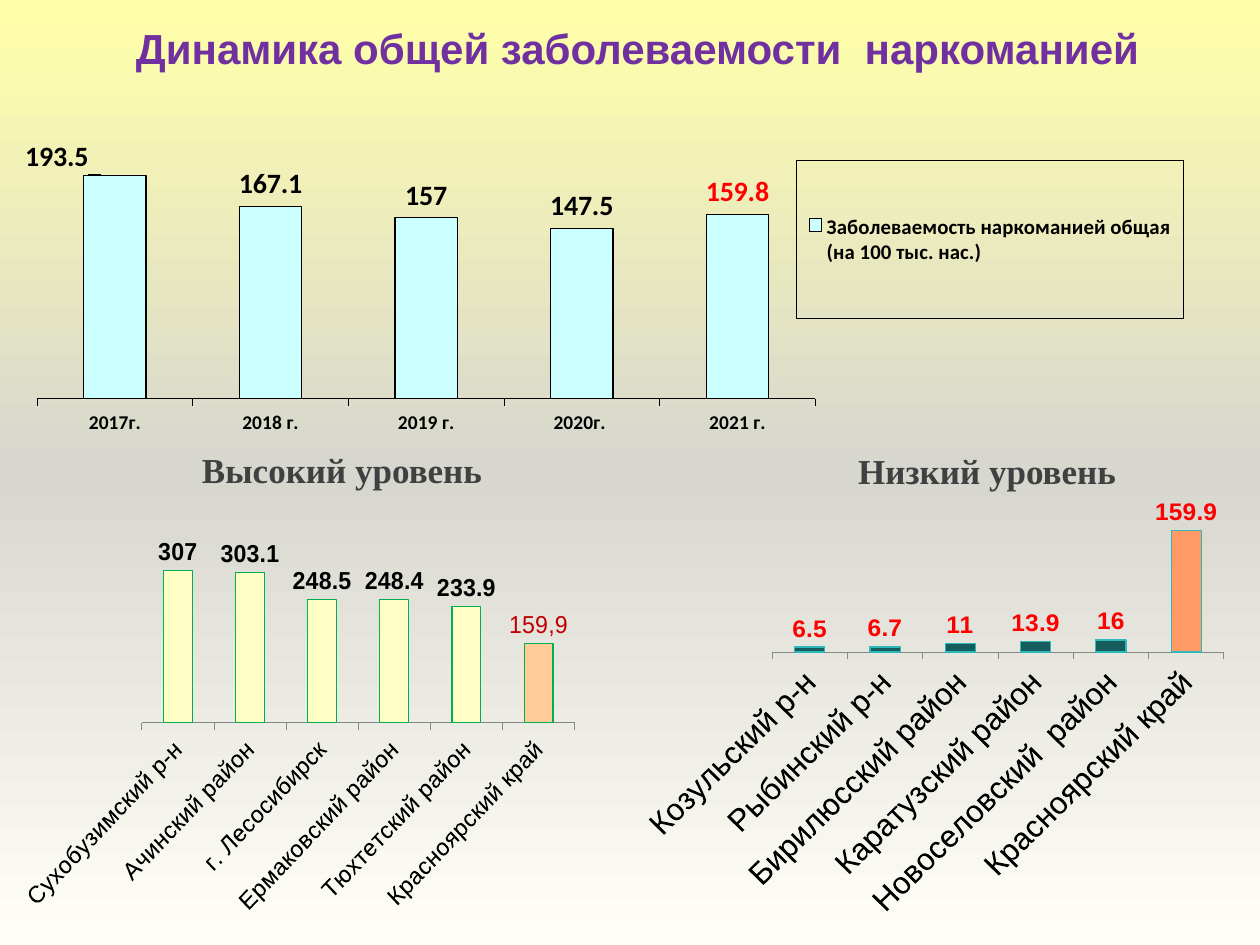
from dataclasses import dataclass, field
from typing import Optional

from pptx import Presentation
from pptx.chart.data import CategoryChartData
from pptx.dml.color import RGBColor
from pptx.enum.chart import XL_CHART_TYPE as ChartType
from pptx.enum.chart import XL_LABEL_POSITION as LabelPos
from pptx.enum.chart import XL_LEGEND_POSITION as LegendPos
from pptx.enum.chart import XL_TICK_LABEL_POSITION as TickLabel
from pptx.enum.chart import XL_TICK_MARK as Tick
from pptx.enum.text import PP_ALIGN as Align
from pptx.oxml import parse_xml
from pptx.oxml.ns import nsdecls, qn
from pptx.util import Inches, Pt

BLACK = RGBColor(0x00, 0x00, 0x00)
GRAY = RGBColor(0x87, 0x87, 0x87)
DARK_GRAY = RGBColor(0x40, 0x40, 0x40)
RED = RGBColor(0xFF, 0x00, 0x00)
DARK_RED = RGBColor(0xC0, 0x00, 0x00)
PURPLE = RGBColor(0x70, 0x30, 0xA0)
PALE_CYAN = RGBColor(0xCC, 0xFF, 0xFF)
PALE_YELLOW = RGBColor(0xFF, 0xFF, 0xC5)
PEACH = RGBColor(0xFF, 0xCC, 0x99)
ORANGE = RGBColor(0xFF, 0x99, 0x66)
GREEN = RGBColor(0x00, 0xB0, 0x50)
TEAL = RGBColor(0x17, 0x5C, 0x5C)
LIGHT_TEAL = RGBColor(0x2D, 0xB9, 0xB9)

SLIDE_W, SLIDE_H = Inches(10), Inches(7.5)
BACKGROUND = ((0, "FFFFAA"), (50, "D7D7D0"), (100, "FFFFF7"))
REGION = "Красноярский край"
C15 = "http://schemas.microsoft.com/office/drawing/2012/chart"


@dataclass(frozen=True)
class Box:
    """Position and size in percent of the slide."""
    x: float
    y: float
    w: float
    h: float

    def emu(self) -> tuple:
        return (int(SLIDE_W * self.x / 100), int(SLIDE_H * self.y / 100),
                int(SLIDE_W * self.w / 100), int(SLIDE_H * self.h / 100))


@dataclass(frozen=True)
class Bars:
    """A column chart; plot and legend are percents of the chart's size."""
    box: Box
    name: str
    data: dict
    top: float
    fill: RGBColor
    line: RGBColor
    plot: Optional[tuple] = None
    font: str = "Arial"
    axis_size: float = 18
    axis_bold: bool = False
    axis_line: RGBColor = GRAY
    label_size: float = 14
    label_color: RGBColor = BLACK
    legend: Optional[tuple] = None
    point_fills: dict = field(default_factory=dict)


def set_font(font, *, size: float, color: RGBColor, name: str, bold: bool = False) -> None:
    font.size, font.name, font.bold = Pt(size), name, bold
    font.color.rgb = color


def add_text(slide, box: Box, text: str, **fmt) -> None:
    tf = slide.shapes.add_textbox(*box.emu()).text_frame
    tf.word_wrap = True
    p = tf.paragraphs[0]
    p.alignment = Align.CENTER
    r = p.add_run()
    r.text = text
    set_font(r.font, **fmt)


def set_background(slide) -> None:
    stops = "".join(f'<a:gs pos="{pos * 1000}"><a:srgbClr val="{rgb}"/></a:gs>'
                    for pos, rgb in BACKGROUND)
    slide.background.fill.solid()
    bg_pr = slide.element.find(".//" + qn("p:bgPr"))
    bg_pr.replace(bg_pr[0], parse_xml(
        f'<a:gradFill {nsdecls("a")} rotWithShape="1"><a:gsLst>{stops}</a:gsLst>'
        '<a:lin ang="5400000" scaled="0"/></a:gradFill>'))


def place(parent, index: int, percents: tuple, inner: bool = False) -> None:
    """Lay out a chart part: an offset (x, y) or a frame (x, y, w, h)."""
    for old in parent.findall(qn("c:layout")):
        parent.remove(old)
    target = '<c:layoutTarget val="inner"/>' if inner else ""
    modes = "".join(f'<c:{k}Mode val="edge"/>' for k in "xy") if len(percents) == 4 else ""
    values = "".join(f'<c:{k} val="{v / 100:.4f}"/>' for k, v in zip("xywh", percents))
    parent.insert(index, parse_xml(
        f'<c:layout {nsdecls("c")}><c:manualLayout>{target}{modes}{values}'
        '</c:manualLayout></c:layout>'))


def sp_pr(line: str):
    return parse_xml(f'<c:spPr {nsdecls("c", "a")}><a:noFill/>{line}</c:spPr>')


def add_legend(chart, spec: Bars) -> None:
    chart.has_legend = True
    chart.legend.position = LegendPos.RIGHT
    chart.legend.include_in_layout = False
    set_font(chart.legend.font, size=11.9, color=BLACK, name=spec.font, bold=True)
    legend = chart.element.find(".//" + qn("c:legend"))
    place(legend, 1, spec.legend)
    legend.find(qn("c:overlay")).addnext(sp_pr(
        '<a:ln w="3175"><a:solidFill><a:srgbClr val="000000"/></a:solidFill></a:ln>'))


def add_bars(slide, spec: Bars):
    data = CategoryChartData()
    data.categories = list(spec.data)
    data.add_series(spec.name, list(spec.data.values()))
    chart = slide.shapes.add_chart(ChartType.COLUMN_CLUSTERED, *spec.box.emu(), data).chart
    chart.has_title = False
    chart.has_legend = False
    set_font(chart.font, size=spec.axis_size, color=BLACK, name=spec.font)
    chart.element.find(qn("c:chart")).addnext(sp_pr("<a:ln><a:noFill/></a:ln>"))
    if spec.plot:
        place(chart.element.find(".//" + qn("c:plotArea")), 0, spec.plot, inner=True)

    # Axes
    values, cats = chart.value_axis, chart.category_axis
    values.minimum_scale, values.maximum_scale = 0, spec.top
    values.has_major_gridlines = False
    values.visible = False
    cats.major_tick_mark = Tick.OUTSIDE
    cats.tick_label_position = TickLabel.LOW
    cats.format.line.color.rgb = spec.axis_line
    cats.format.line.width = Pt(0.5)
    set_font(cats.tick_labels.font, size=spec.axis_size, color=BLACK,
             name=spec.font, bold=spec.axis_bold)

    # Columns and their labels
    plot = chart.plots[0]
    plot.gap_width, plot.vary_by_categories = 150, False
    series = plot.series[0]
    series.invert_if_negative = False
    for i in (None, *spec.point_fills):
        fmt = (series if i is None else series.points[i]).format
        fmt.fill.solid()
        fmt.fill.fore_color.rgb = spec.fill if i is None else spec.point_fills[i]
        fmt.line.color.rgb = spec.line
        fmt.line.width = Pt(0.75)
    labels = series.data_labels
    labels.show_value = True
    labels.position = LabelPos.OUTSIDE_END
    set_font(labels.font, size=spec.label_size, color=spec.label_color,
             name=spec.font, bold=True)
    # No leader line to a moved label
    chart.element.find(f'.//{qn("c:ser")}/{qn("c:dLbls")}').append(parse_xml(
        f'<c:extLst {nsdecls("c")}><c:ext uri="{{CE6537A1-D6FC-4f65-9D91-7224C49458BB}}" '
        f'xmlns:c15="{C15}"><c15:showLeaderLines val="0"/></c:ext></c:extLst>'))
    if spec.legend:
        add_legend(chart, spec)
    return series


YEARS = Bars(
    Box(2, 11.73, 92.3, 34.53), "Заболеваемость наркоманией общая (на 100 тыс. нас.)",
    {"2017г.": 193.5, "2018 г.": 167.1, "2019 г.": 157, "2020г. ": 147.5, "2021 г.": 159.8},
    250, PALE_CYAN, BLACK, plot=(0.9, 0, 67, 88.2), font="Calibri", axis_size=11.1,
    axis_bold=True, axis_line=BLACK, label_size=16, legend=(66.3, 15.1, 33.3, 48.6))
HIGH = Bars(
    Box(1.7, 53.87, 48.8, 43.73), "Series 1",
    {"Сухобузимский р-н": 307, "Ачинский район": 303.1, "г. Лесосибирск": 248.5,
     "Ермаковский район": 248.4, "Тюхтетский район": 233.9, REGION: 159.9},
    350, PALE_YELLOW, GREEN, plot=(14.9, 9.7, 74.5, 42), axis_size=13.9,
    point_fills={5: PEACH})
LOW = Bars(
    Box(50, 52.8, 48.1, 45.2), "Series 1",
    {"Козульский р-н": 6.5, "Рыбинский р-н": 6.7, "Бирилюсский район": 11,
     "Каратузский район": 13.9, "Новоселовский  район": 16, REGION: 159.9},
    180, TEAL, LIGHT_TEAL, label_color=RED, point_fills={5: ORANGE})


def main() -> None:
    prs = Presentation()
    prs.slide_width, prs.slide_height = SLIDE_W, SLIDE_H
    s = prs.slides.add_slide(prs.slide_layouts[6])
    set_background(s)

    # Yearly totals: first label moved left, last one red
    years = add_bars(s, YEARS)
    for i, color in ((0, BLACK), (4, RED)):
        label = years.points[i].data_label
        set_font(label.font, size=16, color=color, name="Calibri", bold=True)
        label.position = LabelPos.OUTSIDE_END
    first = years.points[0].data_label._get_or_add_dLbl()
    place(first, 1, (-5, 1))

    # Districts with the highest and lowest levels
    high = add_bars(s, HIGH)
    label = high.points[5].data_label
    r = label.text_frame.paragraphs[0].add_run()
    r.text = "159,9"
    set_font(r.font, size=14, color=DARK_RED, name="Arial")
    label.position = LabelPos.OUTSIDE_END
    add_bars(s, LOW)

    # Headings
    heading = dict(size=20, color=DARK_GRAY, name="Times New Roman", bold=True)
    add_text(s, Box(64.2, 46.93, 28.3, 5.2), "Низкий уровень", **heading)
    add_text(s, Box(11.4, 46.8, 31.5, 6.4), "Высокий уровень", **heading)
    add_text(s, Box(0, 1.73, 101.2, 6.67), "Динамика общей заболеваемости  наркоманией",
             size=24, color=PURPLE, name="Arial", bold=True)
    prs.save("out.pptx")


if __name__ == "__main__":
    main()
